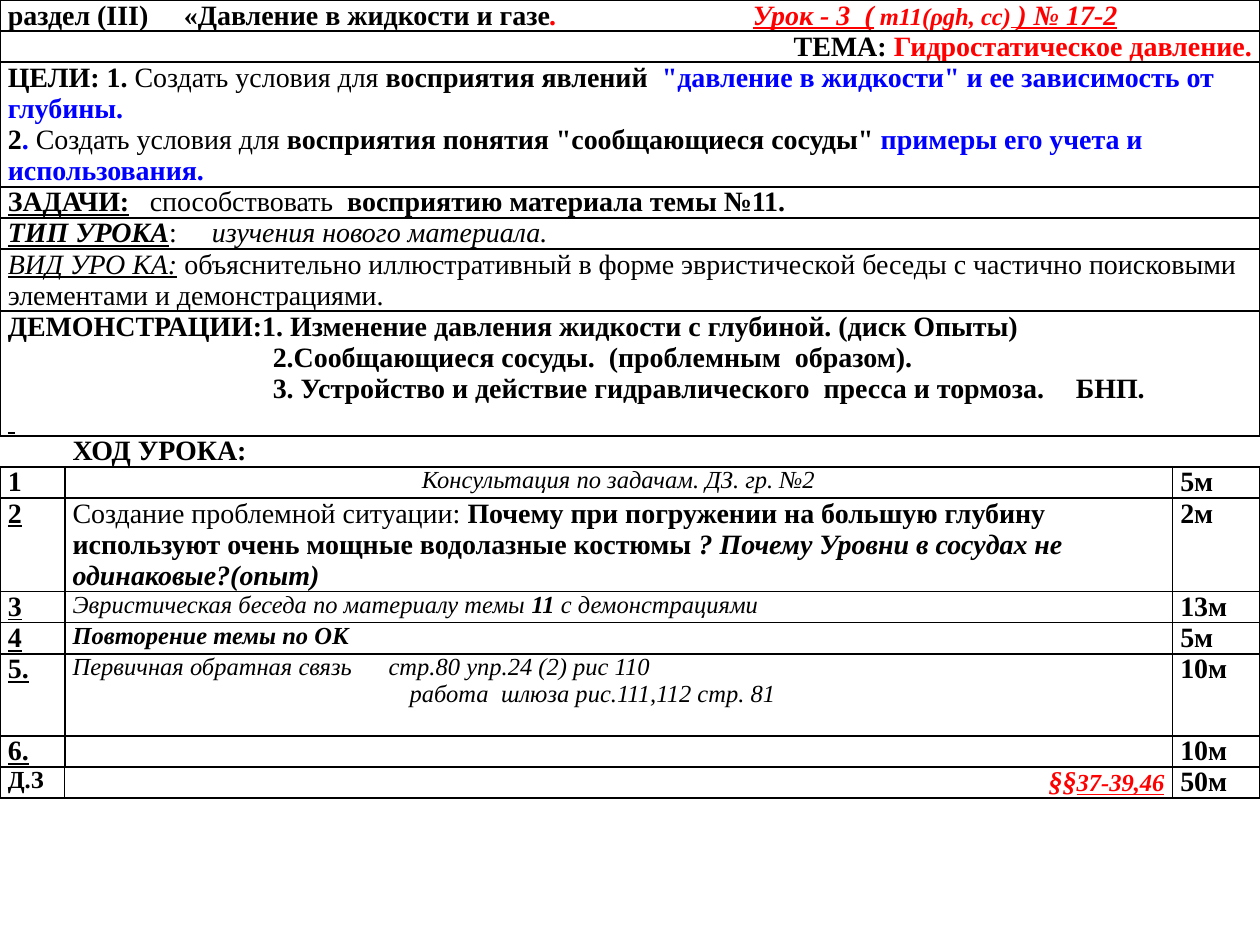
from dataclasses import dataclass
from lxml import etree
from pptx import Presentation
from pptx.dml.color import RGBColor
from pptx.enum.text import PP_ALIGN
from pptx.oxml.ns import qn
from pptx.util import Pt

LEFT, MID, RIGHT = PP_ALIGN.LEFT, PP_ALIGN.CENTER, PP_ALIGN.RIGHT
FONT = "Times New Roman"
BLACK, RED, BLUE = "000000", "FF0000", "0000FF"
LINE = 17.7
WIDTHS = (37, 633, 50)
RULES = (1, 1.5, 1.5, 1, 1, 1, 1.5, 1.5, 1.5, 1, 1, 1, 1, 1.5, 1.5, 1.5)


@dataclass
class Run:
    text: str
    look: str = "b"
    hue: str = BLACK
    size: int = 16


@dataclass
class Para:
    runs: list[Run]
    tabs: tuple = ()
    align: int = LEFT


@dataclass
class Row:
    cells: list[list[Para]]
    lines: float = 1
    edges: tuple = (1.5, 1.5, 1, 1)


def note(text: str, look: str = "i", **kind) -> list[Para]:
    return [Para([Run(text, look, size=14)], **kind)]


def full(*paras: Para, lines: float = 1, edge: float = 1) -> Row:
    return Row([list(paras)], lines, (edge, 0, 0, edge))


def step(mark: str, body: list[Para], time: str, lines: float = 1) -> Row:
    return Row([[Para([Run(mark, "b" if mark == "1" else "bu")])], body,
                [Para([Run(time)])]], lines)


HEAD = [
    full(Para([Run("раздел (III)\t«Давление в жидкости и газе"),
               Run(".\t", "bi", RED), Run("Урок - 3  (", "biu", RED),
               Run(" т11(ρgh, сс)", "bi", RED, 14), Run(" ", "biu", RED, 14),
               Run(") № 17-2", "biu", RED)], (100.6, 425.7))),
    full(Para([Run("ТЕМА:"), Run(" Гидростатическое давление.", "b", RED)],
              align=RIGHT), edge=1.5),
    full(Para([Run("ЦЕЛИ: 1. "), Run("Создать условия для ", ""),
               Run("восприятия явлений  "),
               Run('"давление в жидкости" и ее зависимость от глубины.', "b", BLUE)]),
         Para([Run("2"), Run(". ", "b", BLUE), Run("Создать условия для ", ""),
               Run('восприятия понятия "сообщающиеся сосуды"'),
               Run(" примеры его учета и использования.", "b", BLUE)]), lines=4),
    full(Para([Run("ЗАДАЧИ:", "bu"), Run("\tспособствовать ", ""),
               Run(" восприятию материала темы №11.")], (81.1,))),
    full(Para([Run("ТИП УРОКА", "biu"), Run(":\t", ""),
               Run("изучения нового материала.", "i")], (116.6,))),
    full(Para([Run("ВИД УРО КА:", "iu"),
               Run(" объяснительно иллюстративный в форме эвристической беседы "
                   "с частично поисковыми элементами и демонстрациями.", "")]), lines=2),
    full(Para([Run("ДЕМОНСТРАЦИИ:1. Изменение давления жидкости с глубиной. (диск Опыты)")]),
         Para([Run("\t2.Сообщающиеся сосуды.  (проблемным  образом).")], (151.4,)),
         Para([Run("\t3. Устройство и действие гидравлического  пресса и тормоза.\tБНП.")],
              (151.4, 610.3)),
         Para([Run(" ", "biu")]), lines=4, edge=1.5),
]
PLAN = [
    Row([[], [Para([Run("ХОД УРОКА:")])], []], edges=(0, 0, 0, 0)),
    step("1", note("Консультация по задачам. ДЗ. гр. №2", align=MID), "5м"),
    step("2", [Para([Run("Создание проблемной ситуации: ", ""),
                     Run("Почему при погружении на большую глубину используют "
                         "очень мощные водолазные костюмы "),
                     Run("? Почему Уровни в сосудах не одинаковые?(опыт)", "bi")])], "2м", 3),
    step("3", [Para([Run("Эвристическая беседа по материалу темы", "i", size=14),
                     Run(" 11", "bi", size=14),
                     Run(" с демонстрациями", "i", size=14)])], "13м"),
    step("4", note("Повторение темы по ОК", "bi"), "5м"),
    step("5.", note("Первичная обратная связь\tстр.80 упр.24 (2) рис 110", tabs=(180.6,))
         + note("\tработа  шлюза рис.111,112 стр. 81", tabs=(192.6,)), "10м", 2.65),
    step("6.", [], "10м"),
    Row([note("Д.З", "b"),
         [Para([Run("§§", "bi", RED), Run("37-39,46", "biu", RED, 14)], align=RIGHT)],
         [Para([Run("50м")])]], edges=(1.5, 1, 1, 1.5)),
]


def tint(code: str) -> RGBColor:
    return RGBColor.from_string(code)


def rule(cell, side: str, width: float) -> None:
    line = etree.SubElement(cell._tc.get_or_add_tcPr(), qn(f"a:ln{side}"), w=str(Pt(width)))
    if width:
        fill = etree.SubElement(line, qn("a:solidFill"))
        etree.SubElement(fill, qn("a:srgbClr"), val=BLACK)
    else:
        etree.SubElement(line, qn("a:noFill"))


def write(frame, paras: list[Para]) -> None:
    for spot, para in enumerate(paras):
        item = frame.add_paragraph() if spot else frame.paragraphs[0]
        item.alignment = para.align
        if para.tabs:
            stops = etree.SubElement(item._p.get_or_add_pPr(), qn("a:tabLst"))
            for stop in para.tabs:
                etree.SubElement(stops, qn("a:tab"), pos=str(Pt(stop)), algn="l")
        for run in para.runs:
            part = item.add_run()
            part.text = run.text
            part.font.color.rgb = tint(run.hue)
            form = {"name": FONT, "size": Pt(run.size), "bold": "b" in run.look,
                    "italic": "i" in run.look, "underline": "u" in run.look}
            for key, value in form.items():
                setattr(part.font, key, value)
    if not paras:
        etree.SubElement(frame.paragraphs[0]._p, qn("a:endParaRPr"), sz="1400")


def draw(slide, rows: list[Row]) -> None:
    high = sum(row.lines for row in rows) * LINE
    grid = slide.shapes.add_table(len(rows), len(WIDTHS), Pt(0), Pt(0),
                                  Pt(sum(WIDTHS)), Pt(high)).table
    grid.first_row = grid.horz_banding = False
    for col, width in zip(grid.columns, WIDTHS):
        col.width = Pt(width)
    pad = {"margin_left": Pt(4.5), "margin_right": Pt(4.5),
           "margin_top": Pt(0), "margin_bottom": Pt(0)}
    for y, row in enumerate(rows):
        grid.rows[y].height = Pt(row.lines * LINE)
        wide = len(row.cells) == 1
        if wide:
            grid.cell(y, 0).merge(grid.cell(y, 2))
        for x in range(len(WIDTHS)):
            cell = grid.cell(y, x)
            for key, value in pad.items():
                setattr(cell, key, value)
            end = row.edges[3] if wide else row.edges[x + 1]
            sides = {"L": row.edges[x], "R": end, "T": RULES[y], "B": RULES[y + 1]}
            for side, width in sides.items():
                rule(cell, side, width)
            cell.fill.background()
            write(cell.text_frame, row.cells[x] if x < len(row.cells) else [])


def main() -> None:
    deck = Presentation()
    deck.slide_width, deck.slide_height = Pt(720), Pt(540)
    draw(deck.slides.add_slide(deck.slide_layouts[6]), HEAD + PLAN)
    deck.save("out.pptx")


if __name__ == "__main__":
    main()
